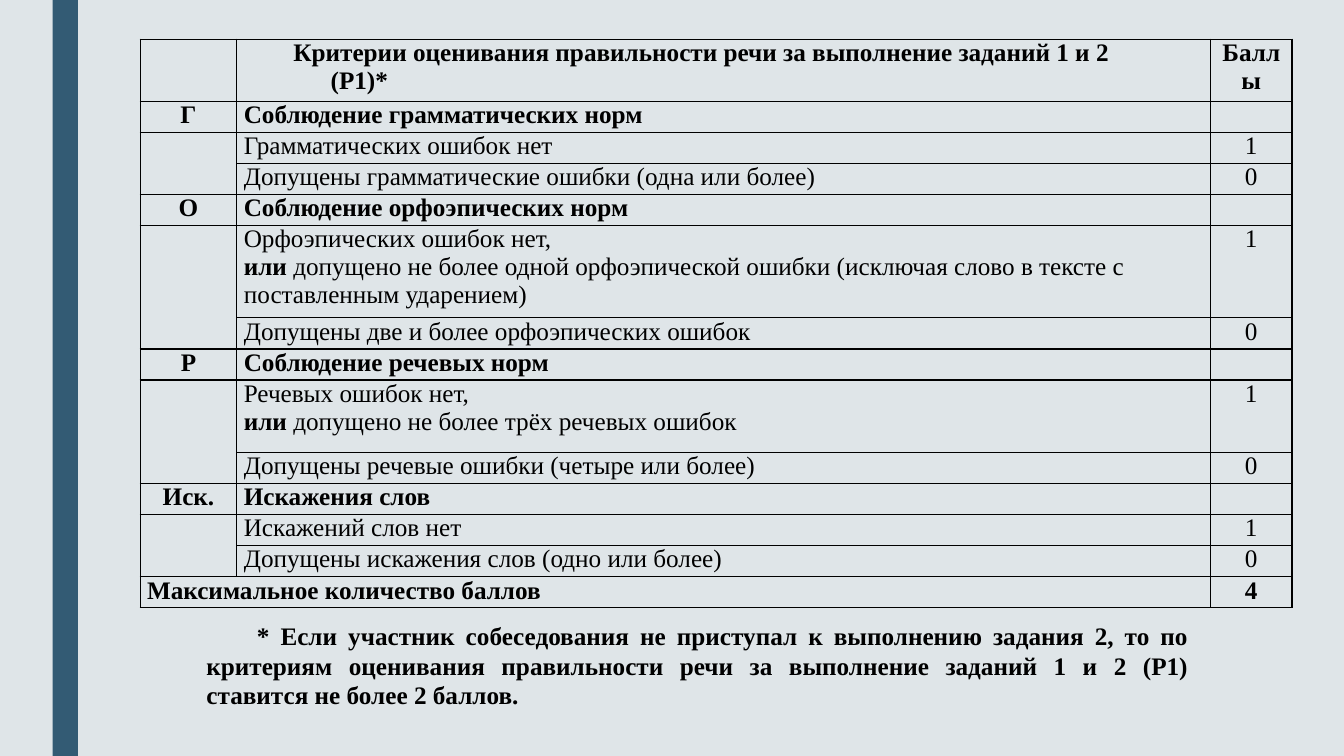
"""Build the slide with the scoring table for correct speech."""
from dataclasses import dataclass

from lxml import etree
from pptx import Presentation
from pptx import util as u
from pptx.dml import color
from pptx.enum import shapes, text
from pptx.oxml import ns

FONT = "Times New Roman"
HUES = {"back": "DFE5E8", "band": "335B74", "ink": "000000"}
COLS = (69.1, 695.5, 58.3)
LEFT, MID = text.PP_ALIGN.LEFT, text.PP_ALIGN.CENTER


@dataclass(frozen=True)
class Run:
    words: str
    bold: bool = False


@dataclass(frozen=True)
class Style:
    align: text.PP_ALIGN = LEFT
    left: float = 0
    right: float = 0
    first: float = 0


@dataclass(frozen=True)
class Row:
    mark: str
    lines: tuple[tuple[Run, ...], ...]
    score: str = ""
    bold: bool = False
    tall: float = 22.2


BODY = Style(left=5)
MARK = Style(MID)
HEAD = Style(left=67, right=43, first=-26.6)
POINTS = Style(MID, left=4.3, right=4.3)
NOTE = Style(text.PP_ALIGN.JUSTIFY, left=66.2, right=27.5, first=36)


def line(words: str, bold: bool = False) -> tuple[tuple[Run, ...], ...]:
    return ((Run(words, bold),),)


def norm(mark: str, words: str) -> Row:
    return Row(mark, line(words, True), bold=True)


def level(words: str, score: str) -> Row:
    return Row("", line(words), score)


def choice(words: str, other: str, tall: float) -> Row:
    return Row("", line(words) + ((Run("или ", True), Run(other)),), "1", tall=tall)


ROWS = (
    Row("", line("Критерии оценивания правильности речи за выполнение заданий 1 и 2 (Р1)*", True),
        "Баллы", True, 44.2),
    norm("Г", "Соблюдение грамматических норм"),
    level("Грамматических ошибок нет", "1"),
    level("Допущены грамматические ошибки (одна или более)", "0"),
    norm("О", "Соблюдение орфоэпических норм"),
    choice("Орфоэпических ошибок нет,",
           "допущено не более одной орфоэпической ошибки "
           "(исключая слово в тексте с поставленным ударением)", 66),
    level("Допущены две и более орфоэпических ошибок", "0"),
    norm("Р", "Соблюдение речевых норм"),
    choice("Речевых ошибок нет,", "допущено не более трёх речевых ошибок", 51.6),
    level("Допущены речевые ошибки (четыре или более)", "0"),
    norm("Иск.", "Искажения слов"),
    level("Искажений слов нет", "1"),
    level("Допущены искажения слов (одно или более)", "0"),
    Row("Максимальное количество баллов", (), "4", True),
)
FOOT = ("* Если участник собеседования не приступал к выполнению задания 2, то по критериям "
        "оценивания правильности речи за выполнение заданий 1 и 2 (P1) ставится не более 2 баллов.")


def hue(name: str) -> color.RGBColor:
    return color.RGBColor.from_string(HUES[name])


def write(frame, lines: tuple[tuple[Run, ...], ...], style: Style) -> None:
    for spot, runs in enumerate(lines):
        para = frame.add_paragraph() if spot else frame.paragraphs[0]
        para.alignment = style.align
        props = para._p.get_or_add_pPr()
        for key, size in (("marL", style.left), ("marR", style.right), ("indent", style.first)):
            props.set(key, str(int(u.Pt(size))))
        for part in runs:
            run = para.add_run()
            run.text = part.words
            run.font.name, run.font.size, run.font.bold = FONT, u.Pt(18), part.bold
            run.font.color.rgb = hue("ink")


def dress(cell) -> None:
    cell.margin_left = cell.margin_right = cell.margin_top = cell.margin_bottom = u.Pt(0)
    cell.fill.background()
    props = cell._tc.get_or_add_tcPr()
    for spot, side in enumerate(("lnL", "lnR", "lnT", "lnB")):
        edge = etree.Element(ns.qn(f"a:{side}"), w=str(int(u.Pt(1))))
        fill = etree.SubElement(edge, ns.qn("a:solidFill"))
        etree.SubElement(fill, ns.qn("a:srgbClr"), val=HUES["ink"])
        props.insert(spot, edge)


def add_grid(slide) -> None:
    frame = slide.shapes.add_table(len(ROWS), len(COLS), u.Pt(100.1), u.Pt(28.1),
                                   u.Pt(sum(COLS)), u.Pt(sum(row.tall for row in ROWS)))
    grid = frame.table
    grid.first_row = grid.horz_banding = False
    for col, wide in zip(grid.columns, COLS):
        col.width = u.Pt(wide)
    last = len(ROWS) - 1
    for spot, row in enumerate(ROWS):
        grid.rows[spot].height = u.Pt(row.tall)
        cells = [grid.cell(spot, col) for col in range(len(COLS))]
        for cell in cells:
            dress(cell)
        if row.mark:
            write(cells[0].text_frame, line(row.mark, True), BODY if spot == last else MARK)
        write(cells[1].text_frame, row.lines, BODY if spot else HEAD)
        if row.score:
            write(cells[2].text_frame, line(row.score, row.bold), MARK if spot else POINTS)
        if row.mark and spot < last:
            grid.cell(spot + 1, 0).merge(grid.cell(spot + 2, 0))
    grid.cell(last, 0).merge(grid.cell(last, 1))


def add_band(slide) -> None:
    band = slide.shapes.add_shape(shapes.MSO_SHAPE.RECTANGLE, u.Pt(37.6), u.Pt(0),
                                  u.Pt(18), u.Pt(540))
    band.shadow.inherit = False
    band.fill.solid()
    band.fill.fore_color.rgb = hue("band")
    band.line.fill.background()


def add_note(slide) -> None:
    frame = slide.shapes.add_textbox(u.Pt(74.2), u.Pt(440.6), u.Pt(809.3), u.Pt(71.3)).text_frame
    frame.word_wrap = True
    write(frame, line(FOOT, True), NOTE)
    frame.paragraphs[0].line_spacing = 0.98


def main() -> None:
    deck = Presentation()
    deck.slide_width, deck.slide_height = u.Pt(960), u.Pt(540)
    slide = deck.slides.add_slide(deck.slide_layouts[6])
    slide.background.fill.solid()
    slide.background.fill.fore_color.rgb = hue("back")
    add_band(slide)
    add_grid(slide)
    add_note(slide)
    deck.save("out.pptx")


if __name__ == "__main__":
    main()
